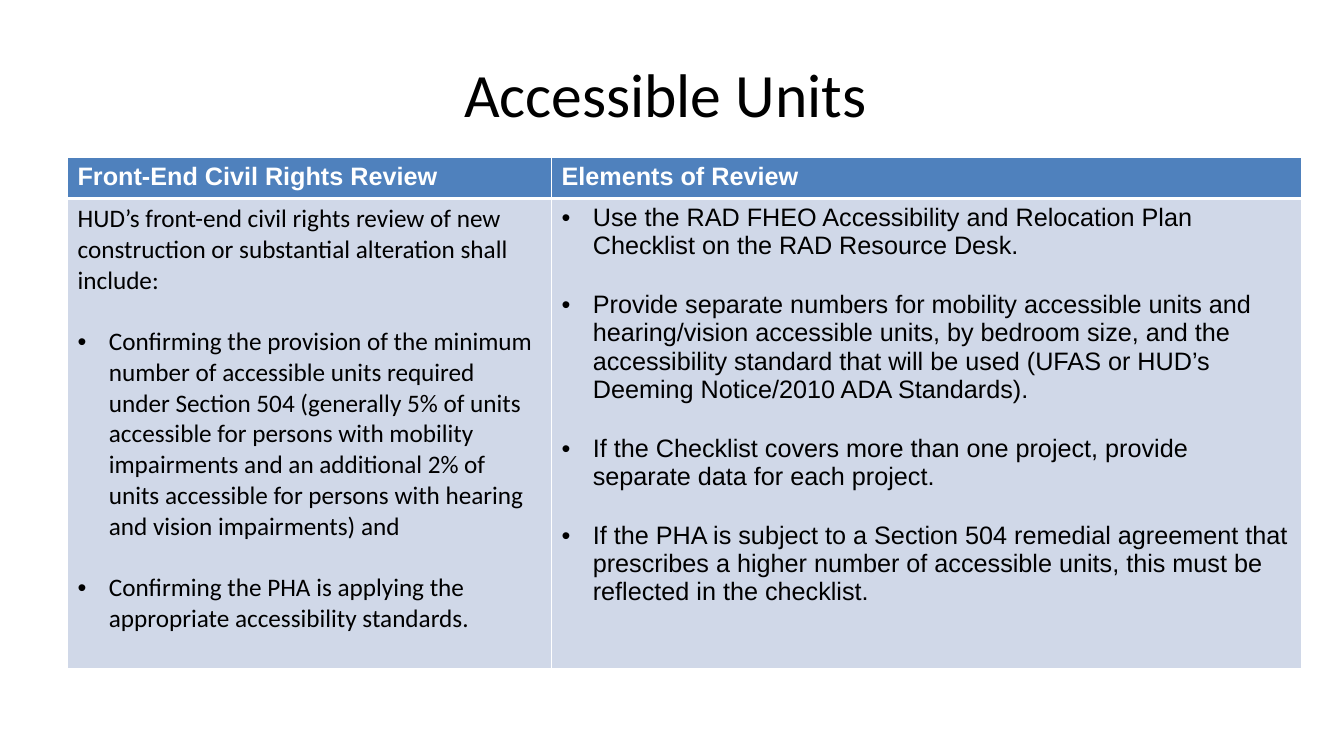
"""Build the Accessible Units slide."""
from dataclasses import dataclass

from lxml import etree
from pptx import Presentation
from pptx.dml.color import RGBColor
from pptx.enum.text import MSO_ANCHOR, PP_ALIGN
from pptx.oxml.ns import qn
from pptx.util import Inches, Pt

CENTER, LEFT = PP_ALIGN.CENTER, PP_ALIGN.LEFT
MIDDLE, TOP = MSO_ANCHOR.MIDDLE, MSO_ANCHOR.TOP
TITLE_ONLY = 5
WHITE, BLACK, BLUE, PALE = "FFFFFF", "000000", "4F81BD", "D0D8E8"
INDENT = Inches(0.31)
ROW_HEIGHTS = (0.41, 4.66)
THIN, THICK = 1, 3


@dataclass
class Column:
    heading: str
    width: float
    font: str
    intro: str
    bullets: list[str]


COLUMNS = [
    Column(
        "Front-End Civil Rights Review", 4.8, "Calibri",
        "HUD’s front-end civil rights review of new construction or "
        "substantial alteration shall include:",
        [
            "Confirming the provision of the minimum number of accessible units "
            "required under Section 504 (generally 5% of units accessible for "
            "persons with mobility impairments and an additional 2% of units "
            "accessible for persons with hearing and vision impairments) and",
            "Confirming the PHA is applying the appropriate accessibility standards.",
        ],
    ),
    Column(
        "Elements of Review", 7.44, "Arial", "",
        [
            "Use the RAD FHEO Accessibility and Relocation Plan Checklist on the "
            "RAD Resource Desk.",
            "Provide separate numbers for mobility accessible units and "
            "hearing/vision accessible units, by bedroom size, and the "
            "accessibility standard that will be used (UFAS or HUD’s Deeming "
            "Notice/2010 ADA Standards).",
            "If the Checklist covers more than one project, provide separate data "
            "for each project.",
            "If the PHA is subject to a Section 504 remedial agreement that "
            "prescribes a higher number of accessible units, this must be "
            "reflected in the checklist.",
        ],
    ),
]


def color(value: str) -> RGBColor:
    return RGBColor.from_string(value)


def write(para, text: str, *, font: str, size: float = 18, fill: str = BLACK,
          bold: bool = False, align=LEFT, bullet: bool = False,
          before: float = 0) -> None:
    if bullet:
        properties = para._p.get_or_add_pPr()
        properties.set("marL", str(INDENT))
        properties.set("indent", str(-INDENT))
        etree.SubElement(properties, qn("a:buFont"), typeface="Arial")
        etree.SubElement(properties, qn("a:buChar"), char="•")
    para.alignment = align
    para.space_before = Pt(before)
    span = para.add_run()
    span.text = text
    span.font.name, span.font.size, span.font.bold = font, Pt(size), bold
    span.font.color.rgb = color(fill)


def style_cell(cell, fill: str, top: float, bottom: float) -> None:
    properties = cell._tc.get_or_add_tcPr()
    for side, width in zip("LRTB", (THIN, THIN, top, bottom)):
        line = etree.SubElement(properties, qn(f"a:ln{side}"), w=str(Pt(width)))
        solid = etree.SubElement(line, qn("a:solidFill"))
        etree.SubElement(solid, qn("a:srgbClr"), val=WHITE)
    cell.fill.solid()
    cell.fill.fore_color.rgb = color(fill)
    cell.vertical_anchor = TOP


def fill_body(cell, column: Column) -> None:
    entries = [(column.intro, False)] if column.intro else []
    entries += [(text, True) for text in column.bullets]
    frame = cell.text_frame
    for index, (text, bullet) in enumerate(entries):
        para = frame.add_paragraph() if index else frame.paragraphs[0]
        write(para, text, font=column.font, bullet=bullet,
              before=22 if index else 0)


def add_title(page) -> None:
    title = page.shapes.title
    title.left, title.top = Inches(0.67), Inches(0.3)
    title.width, title.height = Inches(12), Inches(1.25)
    title.text_frame.vertical_anchor = MIDDLE
    write(title.text_frame.paragraphs[0], "Accessible Units ", font="Calibri",
          size=44, align=CENTER)


def add_review_table(page) -> None:
    width = sum(column.width for column in COLUMNS)
    table = page.shapes.add_table(
        len(ROW_HEIGHTS), len(COLUMNS), Inches(0.67), Inches(1.56),
        Inches(width), Inches(sum(ROW_HEIGHTS))).table
    for row, height in zip(table.rows, ROW_HEIGHTS):
        row.height = Inches(height)
    for index, column in enumerate(COLUMNS):
        table.columns[index].width = Inches(column.width)
        header, body = table.cell(0, index), table.cell(1, index)
        style_cell(header, BLUE, THIN, THICK)
        style_cell(body, PALE, THICK, THIN)
        write(header.text_frame.paragraphs[0], column.heading, font="Arial",
              fill=WHITE, bold=True)
        fill_body(body, column)


def main() -> None:
    deck = Presentation()
    deck.slide_width, deck.slide_height = Inches(13.33), Inches(7.5)
    page = deck.slides.add_slide(deck.slide_layouts[TITLE_ONLY])
    add_title(page)
    add_review_table(page)
    deck.save("out.pptx")


if __name__ == "__main__":
    main()
